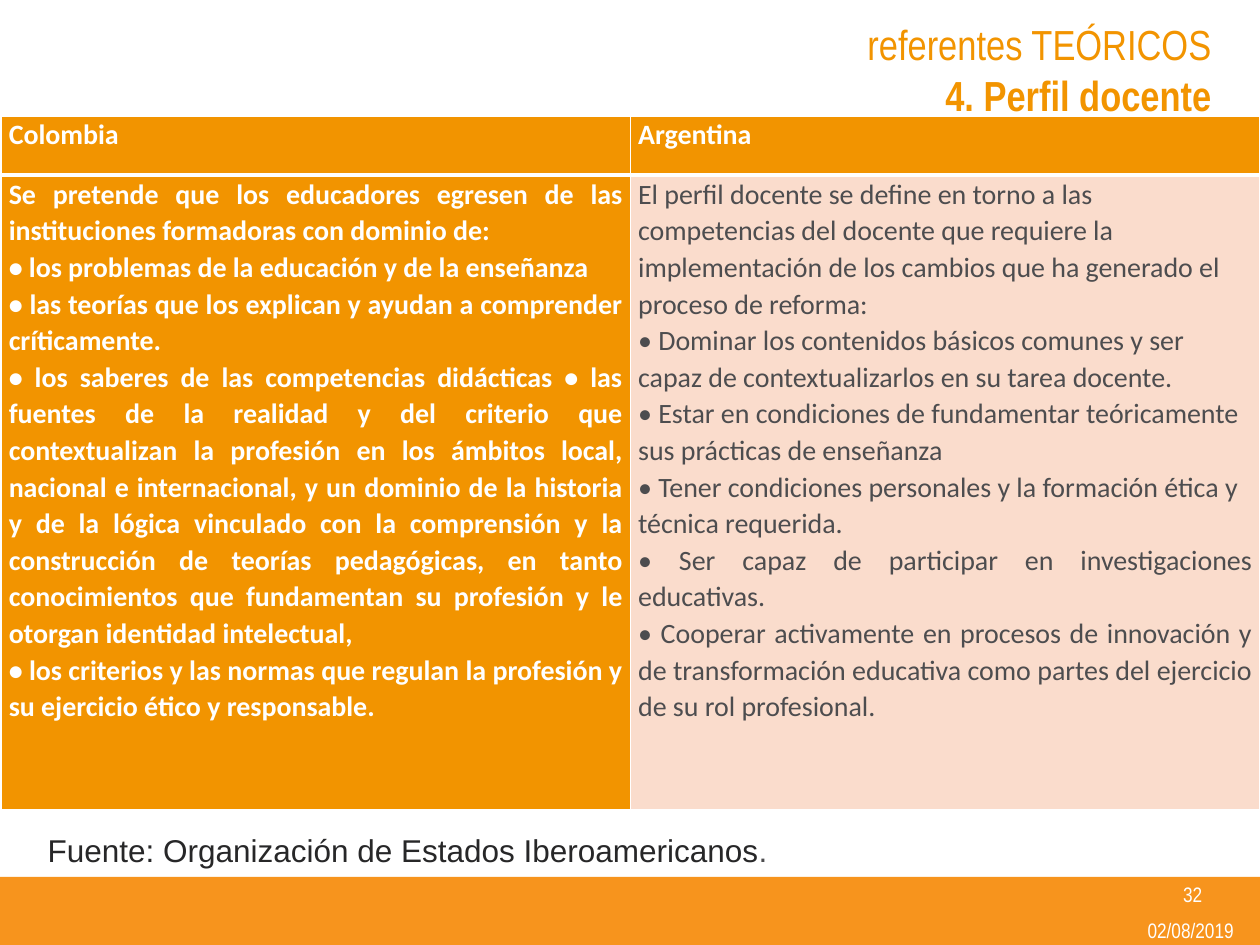
"""Builds the slide comparing teacher profiles in Colombia and Argentina."""
from dataclasses import dataclass

from lxml import etree
from pptx import Presentation
from pptx.dml.color import RGBColor
from pptx.enum import shapes, text
from pptx.oxml import ns
from pptx.util import Inches, Pt

COLORS = {
    "orange": "F29400",
    "footer": "F7941D",
    "peach": "FADCCC",
    "white": "FFFFFF",
    "grey": "4D4D4F",
    "dark": "272728",
}
LEFT, CENTER = text.PP_ALIGN.LEFT, text.PP_ALIGN.CENTER
RIGHT, JUSTIFY = text.PP_ALIGN.RIGHT, text.PP_ALIGN.JUSTIFY
MIDDLE, TOP = text.MSO_ANCHOR.MIDDLE, text.MSO_ANCHOR.TOP


@dataclass
class Profile:
    """One country column; the first `left_count` paragraphs are not justified."""
    country: str
    paragraphs: list[str]
    fill: str
    color: str
    bold: bool
    left_count: int


PROFILES = [
    Profile("Colombia", [
        "Se pretende que los educadores egresen de las instituciones formadoras con dominio de:",
        "• los problemas de la educación y de la enseñanza",
        "• las teorías que los explican y ayudan a comprender críticamente.",
        "• los saberes de las competencias didácticas • las fuentes de la realidad y del criterio "
        "que contextualizan la profesión en los ámbitos local, nacional e internacional, y un "
        "dominio de la historia y de la lógica vinculado con la comprensión y la construcción de "
        "teorías pedagógicas, en tanto conocimientos que fundamentan su profesión y le otorgan "
        "identidad intelectual,",
        "• los criterios y las normas que regulan la profesión y su ejercicio ético y responsable.",
    ], "orange", "white", True, 0),
    Profile("Argentina", [
        "El perfil docente se define en torno a las competencias del docente que requiere la "
        "implementación de los cambios que ha generado el proceso de reforma:",
        "• Dominar los contenidos básicos comunes y ser capaz de contextualizarlos en su tarea "
        "docente.",
        "• Estar en condiciones de fundamentar teóricamente sus prácticas de enseñanza",
        "• Tener condiciones personales y la formación ética y técnica requerida.",
        "• Ser capaz de participar en investigaciones educativas.",
        "• Cooperar activamente en procesos de innovación y de transformación educativa como "
        "partes del ejercicio de su rol profesional.",
    ], "peach", "grey", False, 4),
]


def rgb(name: str) -> RGBColor:
    return RGBColor.from_string(COLORS[name])


def add_text(paragraph, content: str, *, size: float, font: str, color: str,
             bold: bool = False, align=LEFT, spacing: float | None = None) -> None:
    """Append one formatted run to a paragraph."""
    paragraph.alignment = align
    if spacing:
        paragraph.line_spacing = spacing
    run = paragraph.add_run()
    run.text = content
    run.font.size, run.font.name, run.font.bold = Pt(size), font, bold
    run.font.color.rgb = rgb(color)


def add_box(slide, left: float, top: float, width: float, height: float,
            anchor=TOP, wrap: bool = True):
    """Add an empty text box and return its first paragraph."""
    frame = slide.shapes.add_textbox(
        Inches(left), Inches(top), Inches(width), Inches(height)).text_frame
    frame.word_wrap, frame.vertical_anchor = wrap, anchor
    return frame.paragraphs[0]


def set_borders(cell, top: float, bottom: float) -> None:
    """Draw white borders, one point wide at the sides."""
    properties = cell._tc.get_or_add_tcPr()
    for index, (side, width) in enumerate(
            {"lnL": 1, "lnR": 1, "lnT": top, "lnB": bottom}.items()):
        line = etree.Element(ns.qn(f"a:{side}"), w=str(Pt(width)))
        fill = etree.SubElement(line, ns.qn("a:solidFill"))
        etree.SubElement(fill, ns.qn("a:srgbClr"), val=COLORS["white"])
        properties.insert(index, line)


def fill_cell(cell, paragraphs: list[str], fill: str, color: str, bold: bool,
              left_count: int) -> None:
    """Write the paragraphs of a table cell and paint it."""
    cell.margin_left = cell.margin_right = Inches(0.06)
    cell.margin_top = cell.margin_bottom = 0
    cell.fill.solid()
    cell.fill.fore_color.rgb = rgb(fill)
    frame = cell.text_frame
    for index, content in enumerate(paragraphs):
        paragraph = frame.add_paragraph() if index else frame.paragraphs[0]
        add_text(paragraph, content, size=16, font="Calibri", color=color, bold=bold,
                 align=LEFT if index < left_count else JUSTIFY, spacing=1.07)


def add_footer(slide) -> None:
    band = slide.shapes.add_shape(
        shapes.MSO_SHAPE.RECTANGLE, 0, Inches(6.96), Inches(10), Inches(0.56))
    band.shadow.inherit = False
    band.fill.solid()
    band.fill.fore_color.rgb = rgb("footer")
    band.line.fill.background()
    for content, place in (("02/08/2019", (8.92, 7.28, 1.06, 0.21)),
                           ("32", (8.94, 6.95, 1.05, 0.3))):
        add_text(add_box(slide, *place, anchor=MIDDLE), content, size=12,
                 font="Arial Narrow", color="white", align=CENTER)


def add_title(slide) -> None:
    title = slide.shapes.title
    title.left, title.top = Inches(0.75), Inches(0.21)
    title.width, title.height = Inches(9.04), Inches(0.68)
    frame = title.text_frame
    frame.auto_size, frame.vertical_anchor = text.MSO_AUTO_SIZE.NONE, MIDDLE
    heading = frame.paragraphs[0]
    style = dict(size=24, font="Arial Narrow", color="orange", align=RIGHT)
    add_text(heading, "referentes TEÓRICOS ", **style)
    heading.add_line_break()
    add_text(heading, "4. Perfil docente ", bold=True, **style)


def add_profiles(slide) -> None:
    table = slide.shapes.add_table(
        2, len(PROFILES), Inches(0.01), Inches(0.92), Inches(9.99), Inches(5.51)).table
    table.horz_banding = False
    table.rows[0].height, table.rows[1].height = Inches(0.47), Inches(5.04)
    for column, profile in enumerate(PROFILES):
        header, body = table.cell(0, column), table.cell(1, column)
        fill_cell(header, [profile.country], "orange", "white", True, 1)
        fill_cell(body, profile.paragraphs, profile.fill, profile.color, profile.bold,
                  profile.left_count)
        set_borders(header, top=1, bottom=3)
        set_borders(body, top=3, bottom=1)


def main() -> None:
    deck = Presentation()
    deck.slide_width, deck.slide_height = Inches(10), Inches(7.5)
    slide = deck.slides.add_slide(deck.slide_layouts[5])
    add_footer(slide)
    add_title(slide)
    source = add_box(slide, 0.28, 6.55, 5.97, 0.4, wrap=False)
    add_text(source, "Fuente: Organización de Estados Iberoamericanos", size=18,
             font="Arial", color="dark")
    add_text(source, ".", size=18, font="Arial", color="grey")
    add_profiles(slide)
    deck.save("out.pptx")


if __name__ == "__main__":
    main()
